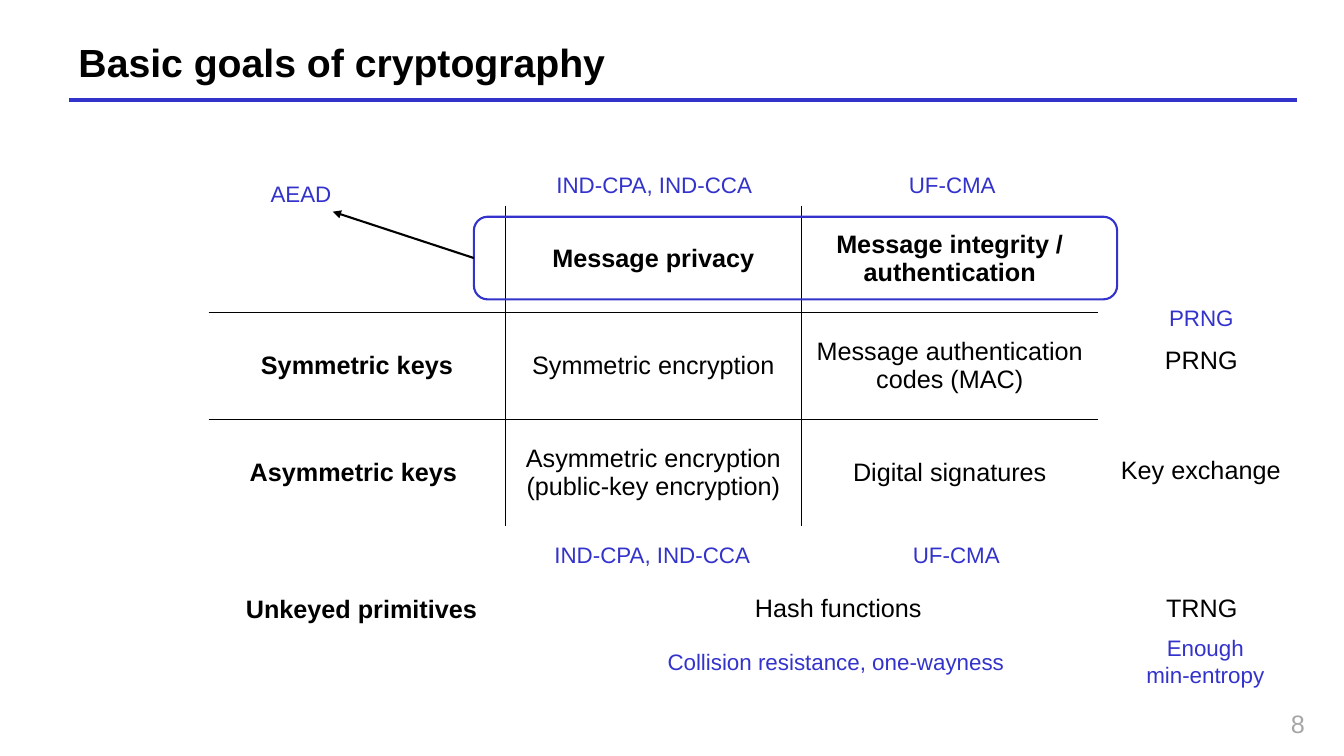
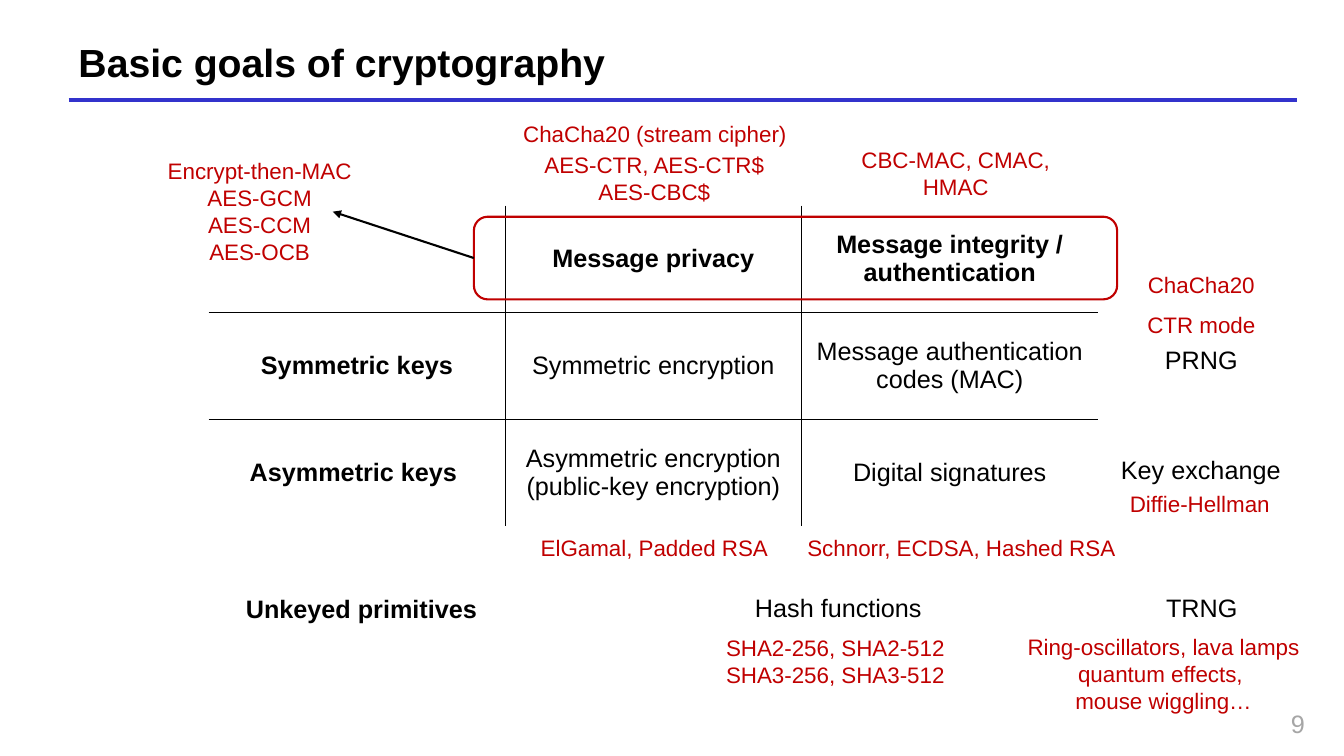
import pptx
import pptx.util
import pptx.dml.color
import pptx.enum.shapes
import pptx.enum.text
import pptx.oxml
import pptx.oxml.ns

PX = 9144
HUES = {"black": "000000", "blue": "3333CC", "red": "C00000", "gray": "A6A6A6", "white": "FFFFFF"}
ALIGN = pptx.enum.text.PP_ALIGN
MIDDLE = pptx.enum.text.MSO_ANCHOR.MIDDLE
TOP = pptx.enum.text.MSO_ANCHOR.TOP
FIT = pptx.enum.text.MSO_AUTO_SIZE.SHAPE_TO_FIT_TEXT
FORMS = pptx.enum.shapes.MSO_SHAPE
STRAIGHT = pptx.enum.shapes.MSO_CONNECTOR.STRAIGHT

FONTS = {
    "title": {"size": 28, "bold": True},
    "head": {"size": 18, "bold": True},
    "body": {"size": 18, "bold": False},
    "note": {"size": 16, "bold": False},
}
LINES = {"note": 27, "body": 30}

GRID = [
    ["", "Message privacy", "Message integrity / authentication"],
    ["Symmetric keys", "Symmetric encryption", "Message authentication codes (MAC)"],
    ["Asymmetric keys ", "Asymmetric encryption (public-key encryption)", "Digital signatures"],
]

LABELS = [
    ("Key exchange", 1101, 446, 180),
    ("Hash functions", 738, 583, 187),
    ("PRNG", 1145, 337, 93),
    ("TRNG", 1146, 583, 92),
]

GOALS = [
    ("IND-CPA, IND-CCA", 541, 165, 216),
    ("IND-CPA, IND-CCA", 539, 532, 216),
    ("UF-CMA", 891, 165, 107),
    ("UF-CMA", 895, 532, 107),
    ("AEAD", 258, 174, 81),
    ("Collision resistance, one-wayness", 650, 638, 358),
    ("PRNG", 1149, 297, 85),
    ("Enough \vmin-entropy ", 1126, 624, 145),
]

SCHEMES = [
    ("Encrypt-then-MAC\nAES-GCM\nAES-CCM\nAES-OCB", 155, 151, 205),
    ("AES-CTR, AES-CTR$\nAES-CBC$", 529, 145, 240),
    ("CBC-MAC, CMAC,\nHMAC", 843, 140, 210),
    ("ElGamal, Padded RSA", 525, 525, 248),
    ("Schnorr, ECDSA, Hashed RSA ", 789, 525, 334),
    ("Diffie-Hellman", 1110, 481, 160),
    ("SHA2-256, SHA2-512\nSHA3-256, SHA3-512", 709, 624, 239),
    ("CTR mode", 1127, 304, 129),
    ("Ring-oscillators, lava lamps\nquantum effects, \vmouse wiggling…", 974, 623, 360),
    ("ChaCha20", 1128, 264, 127),
    ("ChaCha20 (stream cipher)", 507, 114, 285),
]


def rgb(hue):
    return pptx.dml.color.RGBColor.from_string(HUES[hue])


def scale(*nums):
    return [pptx.util.Emu(num * PX) for num in nums]


def assign(thing, values):
    for key, value in values.items():
        setattr(thing, key, value)


class Deck:
    def __init__(self):
        self.file = pptx.Presentation()
        wide, high = scale(1333, 750)
        assign(self.file, {"slide_width": wide, "slide_height": high})

    def page(self, title, num):
        self.slide = self.file.slides.add_slide(self.file.slide_layouts[6])
        self.line((68, 99), (1286, 99), "blue", 3)
        self.text(title, (68, 36, 1218, 50), "title", align=ALIGN.LEFT, anchor=MIDDLE)
        self.text(str(num), (1026, 698, 278, 36), "body", "gray", ALIGN.RIGHT)

    def style(self, frame, words, font, hue, align):
        frame.text = words
        look = FONTS[font]
        for para in frame.paragraphs:
            para.alignment = align
            assign(para.font, {"name": "Arial", "size": pptx.util.Pt(look["size"]), "bold": look["bold"]})
            para.font.color.rgb = rgb(hue)

    def text(self, words, area, font, hue="black", align=ALIGN.CENTER, anchor=TOP):
        frame = self.slide.shapes.add_textbox(*scale(*area)).text_frame
        assign(frame, {"word_wrap": True, "vertical_anchor": anchor})
        self.style(frame, words, font, hue, align)
        return frame

    def label(self, words, left, top, width, font="body", hue="black"):
        count = 1 + words.count("\n") + words.count("\v")
        area = (left, top, width, 10 + LINES[font] * count)
        frame = self.text(words, area, font, hue)
        assign(frame, {"word_wrap": False, "auto_size": FIT})

    def stroke(self, line, hue, width):
        line.width = pptx.util.Pt(width)
        line.color.rgb = rgb(hue)

    def line(self, start, end, hue, width, source=None, arrow=False):
        link = self.slide.shapes.add_connector(STRAIGHT, *scale(*start, *end))
        self.stroke(link.line, hue, width)
        if source is not None:
            link.begin_connect(source, 1)
        props = link.element.spPr
        if arrow:
            tail = pptx.oxml.parse_xml(f'<a:tailEnd {pptx.oxml.ns.nsdecls("a")} type="triangle"/>')
            props.find(pptx.oxml.ns.qn("a:ln")).append(tail)
        props.append(pptx.oxml.parse_xml(f'<a:effectLst {pptx.oxml.ns.nsdecls("a")}/>'))

    def box(self, form, area, hue, width, words=""):
        shape = self.slide.shapes.add_shape(form, *scale(*area))
        shape.shadow.inherit = False
        shape.fill.background()
        self.stroke(shape.line, hue, width)
        if words:
            shape.text_frame.vertical_anchor = MIDDLE
            self.style(shape.text_frame, words, "head", "black", ALIGN.LEFT)
        return shape

    def border(self, cell, side, shown):
        fill = f'<a:solidFill><a:srgbClr val="{HUES["black"]}"/></a:solidFill>' if shown else "<a:noFill/>"
        edge = f'<a:ln{side} {pptx.oxml.ns.nsdecls("a")} w="12700">{fill}</a:ln{side}>'
        cell._tc.get_or_add_tcPr().append(pptx.oxml.parse_xml(edge))

    def table(self, rows, area):
        high, wide = len(rows), len(rows[0])
        table = self.slide.shapes.add_table(high, wide, *scale(*area)).table
        assign(table, {"first_row": False, "horz_banding": False})
        for y, row in enumerate(rows):
            for x, words in enumerate(row):
                cell = table.cell(y, x)
                inner = {"L": x > 0, "R": x < wide - 1, "T": y > 0, "B": y < high - 1}
                for side, shown in inner.items():
                    self.border(cell, side, shown)
                cell.fill.background()
                cell.vertical_anchor = MIDDLE
                font = "head" if 0 in (x, y) else "body"
                self.style(cell.text_frame, words, font, "black", ALIGN.CENTER)

    def board(self, num, hue, notes):
        self.page("Basic goals of cryptography", num)
        self.table(GRID, (207, 204, 882, 318))
        ring = self.box(FORMS.ROUNDED_RECTANGLE, (470, 215, 638, 82), hue, 1.5)
        self.line((470, 256), (330, 210), "black", 1.5, ring, True)
        self.box(FORMS.RECTANGLE, (234, 573, 275, 61), "white", 1, "Unkeyed primitives")
        for item in LABELS:
            self.label(*item)
        for item in notes:
            self.label(*item, "note", hue)


def main():
    deck = Deck()
    deck.board(8, "blue", GOALS)
    deck.board(9, "red", SCHEMES)
    deck.file.save("out.pptx")


if __name__ == "__main__":
    main()
